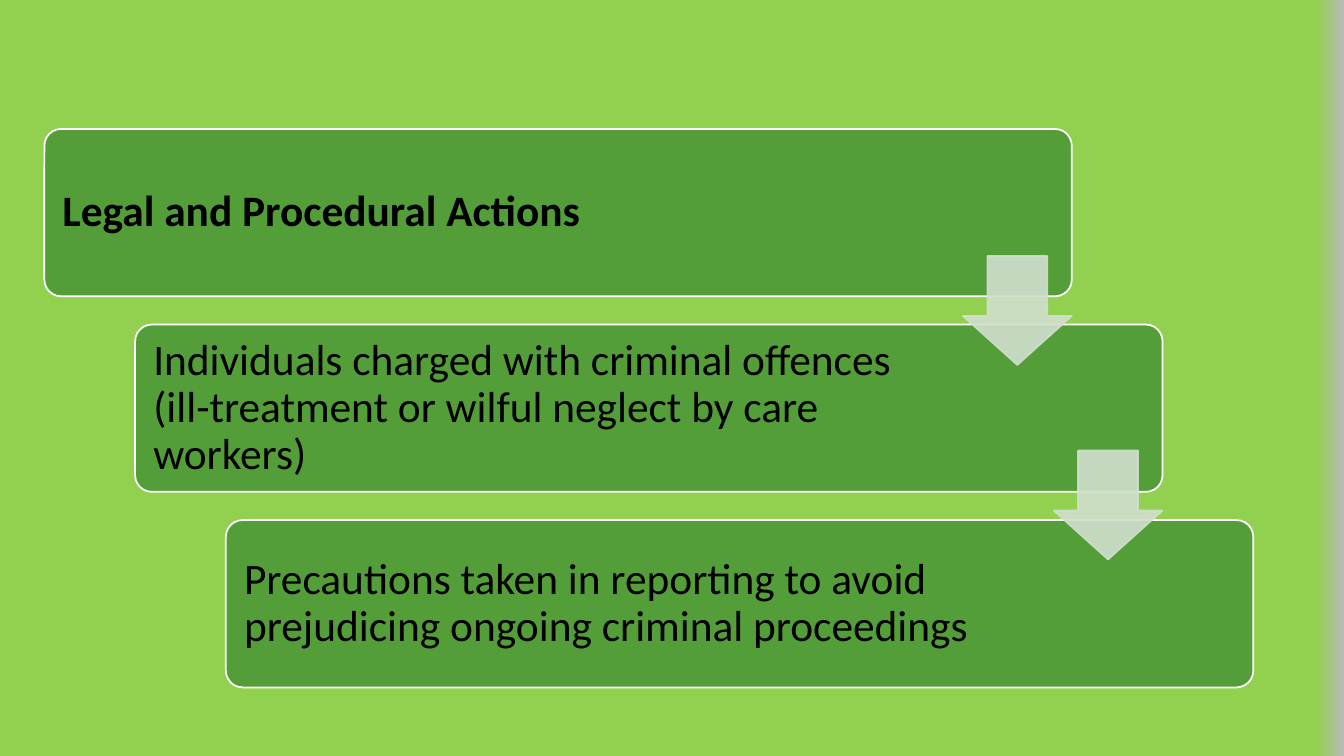
"""Build a slide with three stepped boxes on legal and procedural actions."""
from pptx import Presentation
from pptx.dml.color import RGBColor
from pptx.enum.shapes import MSO_SHAPE as Shape
from pptx.enum.text import MSO_ANCHOR as Anchor, PP_ALIGN as Align
from pptx.oxml.ns import qn
from pptx.util import Inches, Pt
from lxml import etree

LIME = RGBColor(0x92, 0xD0, 0x50)
GREY = RGBColor(0xB9, 0xB9, 0xB9)
GREEN = RGBColor(0x54, 0x9E, 0x39)
PALE = RGBColor(0xD1, 0xDF, 0xCE)
WHITE = RGBColor(0xFF, 0xFF, 0xFF)
BLACK = RGBColor(0, 0, 0)

STEPS = [
    ("Legal and Procedural Actions", 8.4, True),
    ("Individuals charged with criminal offences (ill-treatment or wilful "
     "neglect by care workers)", 8.12, False),
    ("Precautions taken in reporting to avoid prejudicing ongoing criminal "
     "proceedings", 8.12, False),
]
LEFT, TOP = 0.44, 1.28
RIGHT, DOWN = 0.9, 1.94
WIDE, HIGH = 10.19, 1.66
ARROW = 1.08
PAD = 0.05


def add_block(kind, x, y, w, h, fill, line):
    block = slide.shapes.add_shape(kind, Inches(x), Inches(y), Inches(w), Inches(h))
    block.shadow.inherit = False
    block.fill.solid()
    block.fill.fore_color.rgb = fill
    block.line.color.rgb = line
    block.line.width = Pt(1.25)
    return block


deck = Presentation()
deck.slide_width, deck.slide_height = Inches(13.33), Inches(7.5)
slide = deck.slides.add_slide(deck.slide_layouts[6])

back = slide.background.fill
back.gradient()
back.gradient_angle = 0
for stop, color, place in zip(back.gradient_stops, (LIME, GREY), (0.98, 1)):
    stop.color.rgb = color
    stop.position = place

for i, (text, width, bold) in enumerate(STEPS):
    x, y = LEFT + i * RIGHT, TOP + i * DOWN
    box = add_block(Shape.ROUNDED_RECTANGLE, x, y, WIDE, HIGH, GREEN, WHITE)
    box.adjustments[0] = 0.1

    label = slide.shapes.add_textbox(Inches(x + PAD), Inches(y + PAD),
                                     Inches(width), Inches(HIGH - 2 * PAD))
    frame = label.text_frame
    frame.word_wrap = True
    frame.vertical_anchor = Anchor.MIDDLE
    frame.margin_left = frame.margin_right = Inches(0.13)
    frame.margin_top = frame.margin_bottom = Inches(0.13)
    frame.text = text
    para = frame.paragraphs[0]
    para.alignment = Align.LEFT
    para.line_spacing = 0.9
    font = para.runs[0].font
    font.name, font.size, font.bold = "Calibri", Pt(31), bold
    font.color.rgb = BLACK

for i in range(len(STEPS) - 1):
    x = LEFT + WIDE - ARROW + i * RIGHT
    arrow = add_block(Shape.DOWN_ARROW, x, 2.54 + i * 1.93, ARROW, ARROW, PALE, PALE)
    arrow.adjustments[0], arrow.adjustments[1] = 0.55, 0.45
    for color in arrow.element.spPr.iter(qn("a:srgbClr")):
        etree.SubElement(color, qn("a:alpha")).set("val", "90000")

deck.save("out.pptx")
